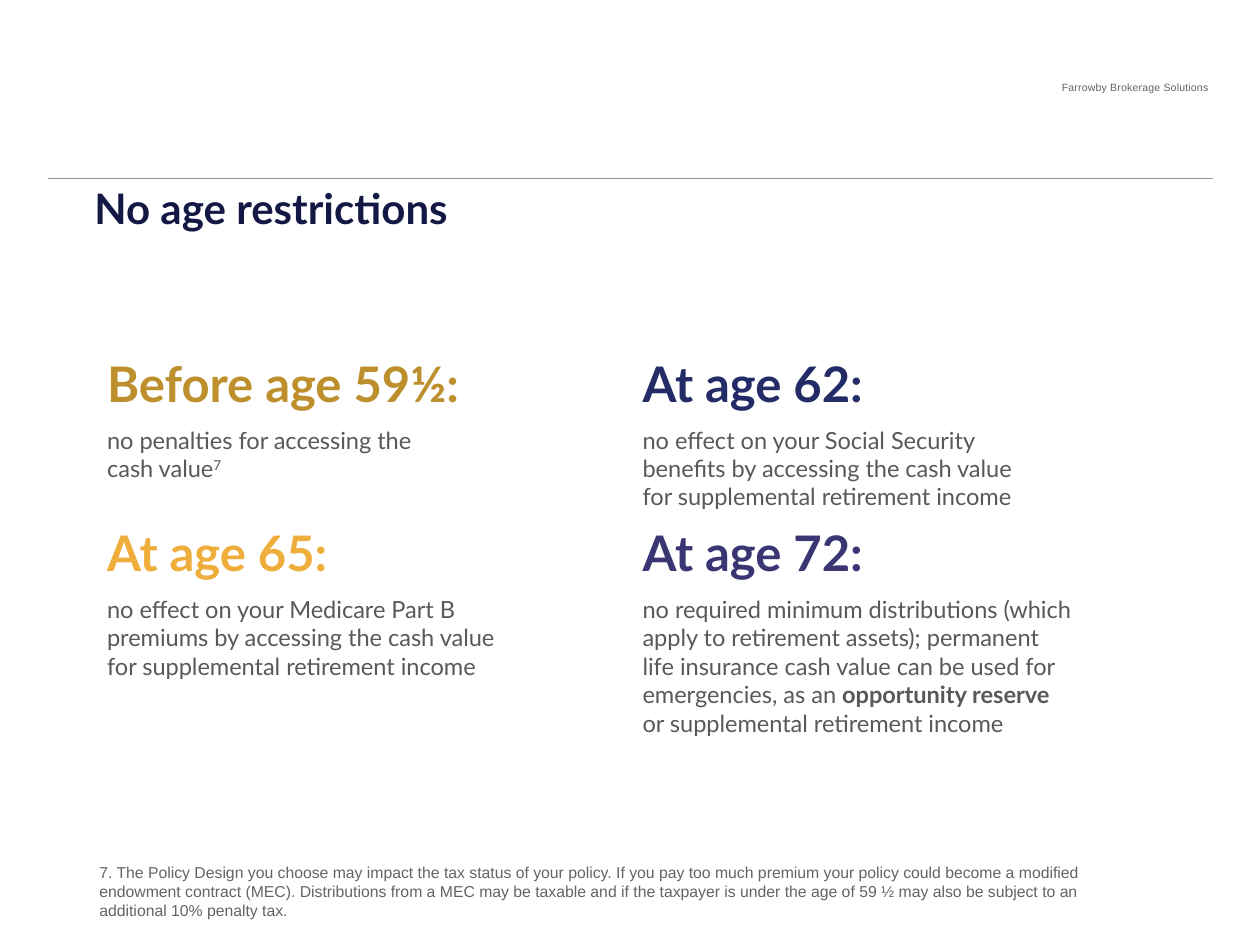
from lxml.etree import SubElement
from pptx import Presentation
from pptx.dml.color import RGBColor
from pptx.enum.shapes import MSO_CONNECTOR
from pptx.enum.text import PP_ALIGN
from pptx.oxml.ns import qn
from pptx.util import Inches, Pt

COLORS = {
    "title": "131944", "body": "58595B", "note": "636466", "rule": "929497",
    "gold": "BD8F2D", "navy": "232C66", "amber": "EFAE3C", "violet": "3A3673",
}

# Each band of the table: heading, heading colour, lines of text
AGES = [
    [("Before age 59½:", "gold",
      ["no penalties for accessing the", "cash value^7"]),
     ("At age 62:", "navy",
      ["no effect on your Social Security",
       "benefits by accessing the cash value",
       "for supplemental retirement income"])],
    [("At age 65:", "amber",
      ["no effect on your Medicare Part B",
       "premiums by accessing the cash value",
       "for supplemental retirement income"]),
     ("At age 72:", "violet",
      ["no required minimum distributions (which",
       "apply to retirement assets); permanent",
       "life insurance cash value can be used for",
       "emergencies, as an *opportunity reserve",
       "or supplemental retirement income"])],
]
FOOTNOTE = (
    "7. The Policy Design you choose may impact the tax status of your policy. "
    "If you pay too much premium your policy could become a modified endowment "
    "contract (MEC). Distributions from a MEC may be taxable and if the taxpayer "
    "is under the age of 59 ½ may also be subject to an additional 10% penalty tax."
)


def add_run(p, text, size=13.5, color="body", font="Lato", bold=False,
            raised=False, spacing=None):
    r = p.add_run()
    r.text = text
    r.font.name, r.font.size, r.font.bold = font, Pt(size), bold
    r.font.color.rgb = RGBColor.from_string(COLORS[color])
    if raised:
        r.font._element.set("baseline", "30000")
    if spacing:
        r.font._element.set("spc", str(spacing))


def add_box(s, box, text, inset=None, align=None, line_spacing=None, **fmt):
    tf = s.shapes.add_textbox(*map(Inches, box)).text_frame
    tf.word_wrap = True
    if inset is not None:
        tf.margin_left = tf.margin_top = Inches(inset)
        tf.margin_right = tf.margin_bottom = Inches(inset)
    p = tf.paragraphs[0]
    p.alignment, p.line_spacing = align, line_spacing
    add_run(p, text, **fmt)


def add_rule(s, x1, x2, y):
    line = s.shapes.add_connector(
        MSO_CONNECTOR.STRAIGHT, Inches(x1), Inches(y), Inches(x2), Inches(y))
    line.line.color.rgb = RGBColor.from_string(COLORS["rule"])
    line.line.width = Pt(0.5)
    SubElement(line._element.spPr, qn("a:effectLst"))


def fill_lines(cell, lines):
    """Write one paragraph per line; ^ starts a superscript, * starts bold."""
    tf = cell.text_frame
    for i, line in enumerate(lines):
        p = tf.add_paragraph() if i else tf.paragraphs[0]
        mark = next((m for m in "^*" if m in line), None)
        plain, _, marked = line.partition(mark) if mark else (line, "", "")
        add_run(p, plain)
        if marked:
            add_run(p, marked, raised=mark == "^", bold=mark == "*")


def add_age_table(s):
    table = s.shapes.add_table(
        2 * len(AGES), 2, Inches(0.75), Inches(2.76), Inches(8.5), Inches(1.64)).table
    table.first_row = table.horz_banding = False
    for cell in table.iter_cells():
        cell.fill.background()
    for band, ages in enumerate(AGES):
        for col, (heading, color, lines) in enumerate(ages):
            p = table.cell(2 * band, col).text_frame.paragraphs[0]
            add_run(p, heading, size=28, color=color, bold=True)
            fill_lines(table.cell(2 * band + 1, col), lines)
    # Row heights that hold the text: headings, then three and five lines
    for row, height in zip(table.rows, (0.57, 0.77, 0.57, 1.22)):
        row.height = Inches(height)


def main():
    prs = Presentation()
    prs.slide_width, prs.slide_height = Inches(10), Inches(7.5)
    s = prs.slides.add_slide(prs.slide_layouts[6])

    # Header
    add_box(s, (7.89, 0.64, 1.7, 0.12), "Farrowby Brokerage Solutions", inset=0,
            align=PP_ALIGN.RIGHT, size=6, color="note", font="Arial", spacing=10)
    add_rule(s, 0.38, 9.63, 1.42)
    add_box(s, (0.75, 1.58, 8.5, 1.05), "No age restrictions", inset=0,
            line_spacing=Pt(19.5), size=24, color="title", bold=True)

    # Ages and footnote
    add_age_table(s)
    add_box(s, (0.69, 6.8, 8.08, 0.56), FOOTNOTE, size=9, color="note", font="Arial")

    prs.save("out.pptx")


if __name__ == "__main__":
    main()
